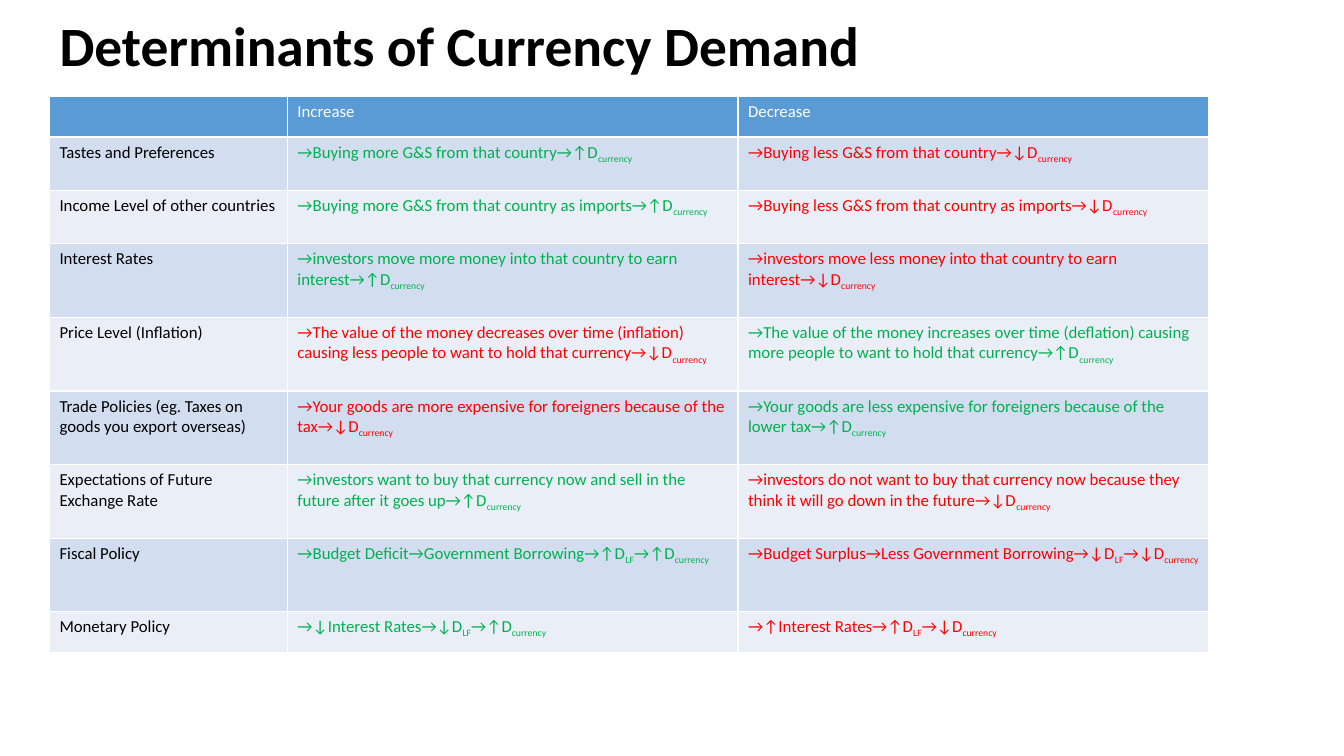
from pptx import Presentation
from pptx.dml.color import RGBColor
from pptx.enum.text import MSO_ANCHOR, PP_ALIGN
from pptx.util import Inches, Pt

BLACK = RGBColor(0x00, 0x00, 0x00)
WHITE = RGBColor(0xFF, 0xFF, 0xFF)
GREEN = RGBColor(0x00, 0xB0, 0x50)
RED = RGBColor(0xFF, 0x00, 0x00)
HEADER_FILL = RGBColor(0x5B, 0x9B, 0xD5)
BAND_FILLS = (RGBColor(0xEA, 0xEF, 0xF7), RGBColor(0xD2, 0xDE, 0xEF))
FONT = "Calibri"

# Content: underscores switch subscript on and off
TITLE = "Determinants of Currency Demand"
ROWS = [
    ("", "Increase", "Decrease"),
    ("Tastes and Preferences",
     "→Buying more G&S from that country→↑D_currency",
     "→Buying less G&S from that country→↓D_currency"),
    ("Income Level of other countries",
     "→Buying more G&S from that country as imports→↑D_currency",
     "→Buying less G&S from that country as imports→↓D_currency"),
    ("Interest Rates",
     "→investors move more money into that country to earn interest→↑D_currency",
     "→investors move less money into that country to earn interest→↓D_currency"),
    ("Price Level (Inflation)",
     "→The value of the money decreases over time (inflation) causing less people "
     "to want to hold that currency→↓D_currency",
     "→The value of the money increases over time (deflation) causing more people "
     "to want to hold that currency→↑D_currency"),
    ("Trade Policies (eg. Taxes on goods you export overseas)",
     "→Your goods are more expensive for foreigners because of the tax→↓D_currency",
     "→Your goods are less expensive for foreigners because of the lower tax→↑D_currency"),
    ("Expectations of Future Exchange Rate",
     "→investors want to buy that currency now and sell in the future after it goes "
     "up→↑D_currency",
     "→investors do not want to buy that currency now because they think it will go "
     "down in the future→↓D_currency"),
    ("Fiscal Policy",
     "→Budget Deficit→Government Borrowing→↑D_LF_→↑D_currency",
     "→Budget Surplus→Less Government Borrowing→↓D_LF_→↓D_currency"),
    ("Monetary Policy",
     "→↓Interest Rates→↓D_LF_→↑D_currency",
     "→↑Interest Rates→↑D_LF_→↓D_currency"),
]
COL_WIDTHS = (2.36, 4.47, 4.67)
ROW_HEIGHTS = (0.4, 0.53, 0.53) + (0.73,) * 5 + (0.4,)
LEFT, TABLE_TOP = 0.49, 0.96


def text_color(text, row, col):
    if row == 0:
        return WHITE
    if col == 0:
        return BLACK
    return GREEN if text.endswith("↑D_currency") else RED


def fill_cell(cell, text, row, col):
    cell.fill.solid()
    cell.fill.fore_color.rgb = BAND_FILLS[row % 2] if row else HEADER_FILL
    p = cell.text_frame.paragraphs[0]
    p.font.name, p.font.size, p.font.bold = FONT, Pt(12), False
    p.font.color.rgb = text_color(text, row, col)
    if not text:
        return
    for i, part in enumerate(text.split("_")):
        r = p.add_run()
        r.text = part
        # Run properties override the table style's header formatting
        r.font.name, r.font.size, r.font.bold = FONT, Pt(12), False
        r.font.color.rgb = text_color(text, row, col)
        if i % 2:
            r.font._element.set("baseline", "-25000")


prs = Presentation()
prs.slide_width, prs.slide_height = Inches(13.33), Inches(7.5)
s = prs.slides.add_slide(prs.slide_layouts[5])

# Title
title = s.shapes.title
title.left, title.top = Inches(LEFT), Inches(0.17)
title.width, title.height = Inches(sum(COL_WIDTHS)), Inches(0.62)
tf = title.text_frame
tf.text = TITLE
tf.vertical_anchor = MSO_ANCHOR.MIDDLE
p = tf.paragraphs[0]
p.alignment, p.line_spacing = PP_ALIGN.LEFT, 0.9
p.font.name, p.font.size, p.font.bold = FONT, Pt(39.6), True
p.font.color.rgb = BLACK

# Table
table = s.shapes.add_table(
    len(ROWS), len(COL_WIDTHS), Inches(LEFT), Inches(TABLE_TOP),
    Inches(sum(COL_WIDTHS)), Inches(sum(ROW_HEIGHTS))).table
for column, width in zip(table.columns, COL_WIDTHS):
    column.width = Inches(width)
for row, height in zip(table.rows, ROW_HEIGHTS):
    row.height = Inches(height)
for i, texts in enumerate(ROWS):
    for j, text in enumerate(texts):
        fill_cell(table.cell(i, j), text, i, j)

prs.save("out.pptx")
